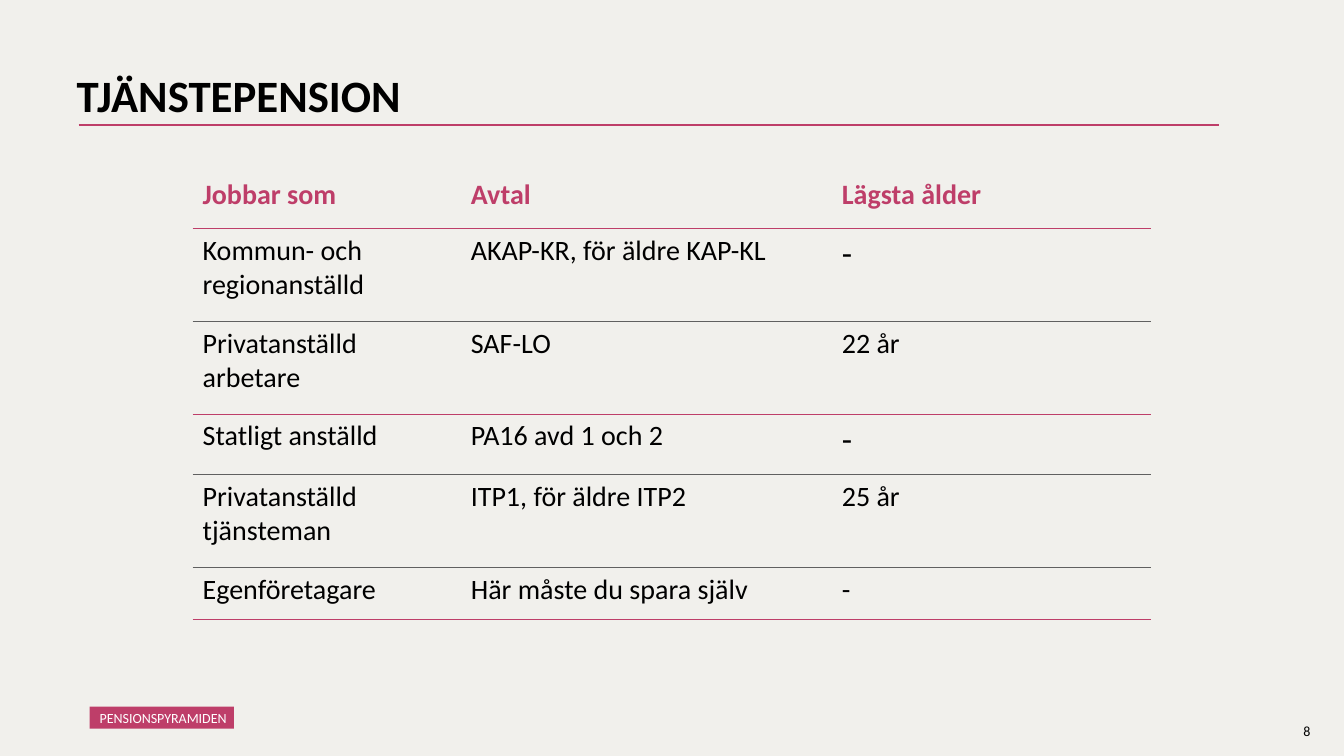
"""Build the occupational pension slide with its table of agreements."""
from lxml.etree import SubElement as Sub
from pptx import Presentation
from pptx.dml.color import RGBColor as Rgb
from pptx.enum.shapes import MSO_CONNECTOR as Conn, MSO_SHAPE as Shape
from pptx.enum.text import MSO_ANCHOR as Anchor, PP_ALIGN as Align
from pptx.oxml.ns import qn
from pptx.util import Inches, Pt

COLORS = {"back": "F1F0EC", "pink": "BE3E69", "gray": "606060",
          "black": "000000", "white": "FFFFFF"}
TITLE = "TJÄNSTEPENSION"
TAG = "PENSIONSPYRAMIDEN"
PAGE = "8"
ROWS = [
    ("Jobbar som", "Avtal", "Lägsta ålder"),
    ("Kommun- och regionanställd", "AKAP-KR, för äldre KAP-KL", "-"),
    ("Privatanställd arbetare", "SAF-LO", "22 år"),
    ("Statligt anställd", "PA16 avd 1 och 2", "-"),
    ("Privatanställd tjänsteman", "ITP1, för äldre ITP2", "25 år"),
    ("Egenföretagare", "Här måste du spara själv", "-"),
]
WIDTHS = [2.66, 3.68, 3.17]
HEIGHTS = [0.56, 0.92, 0.92, 0.6, 0.92, 0.52]
RULES = [("pink", 1), ("gray", 0.5), ("pink", 0.5),
         ("gray", 0.5), ("gray", 0.5), ("pink", 0.5)]
BIG = {(1, 2), (3, 2)}


def color(name):
    return Rgb.from_string(COLORS[name])


def box(*sides):
    return [Inches(side) for side in sides]


def write(frame, text, size, tint="black", bold=False, **form):
    frame.text = text
    para = frame.paragraphs[0]
    for key, value in {"alignment": Align.LEFT, **form}.items():
        setattr(para, key, value)
    font = para.runs[0].font
    for key, value in {"name": "Calibri", "size": Pt(size), "bold": bold}.items():
        setattr(font, key, value)
    font.color.rgb = color(tint)


def border(cell, side, rule=None):
    line = Sub(cell._tc.get_or_add_tcPr(), qn("a:ln" + side))
    if rule:
        tint, width = rule
        line.set("w", str(Pt(width)))
        fill = Sub(line, qn("a:solidFill"))
        Sub(fill, qn("a:srgbClr")).set("val", COLORS[tint])
    else:
        line.set("w", "0")
        Sub(line, qn("a:noFill"))


def add_grid(slide):
    spot = box(1.91, 1.71, sum(WIDTHS), sum(HEIGHTS))
    table = slide.shapes.add_table(len(ROWS), len(WIDTHS), *spot).table
    table.first_row = table.horz_banding = False
    for col, width in zip(table.columns, WIDTHS):
        col.width = Inches(width)
    for r, (row, high) in enumerate(zip(ROWS, HEIGHTS)):
        table.rows[r].height = Inches(high)
        for c, text in enumerate(row):
            cell = table.cell(r, c)
            write(cell.text_frame, text, 24 if (r, c) in BIG else 20,
                  "black" if r else "pink", r == 0)
            edges = {"L": None, "R": None,
                     "T": RULES[r - 1] if r else None, "B": RULES[r]}
            for side, rule in edges.items():
                border(cell, side, rule)
            cell.fill.background()


def main():
    deck = Presentation()
    deck.slide_width, deck.slide_height = box(13.33, 7.5)
    slide = deck.slides.add_slide(deck.slide_layouts[5])
    slide.background.fill.solid()
    slide.background.fill.fore_color.rgb = color("back")
    shapes = slide.shapes

    title = shapes.title
    title.left, title.top, title.width, title.height = box(0.66, 0.68, 11.5, 1.45)
    title.text_frame.vertical_anchor = Anchor.TOP
    write(title.text_frame, TITLE, 32, bold=True, line_spacing=0.9)

    rule = shapes.add_connector(Conn.STRAIGHT, *box(0.78, 1.24, 12.09, 1.24))
    rule.line.color.rgb = color("pink")
    rule.line.width = Pt(1.5)
    Sub(rule._element.spPr, qn("a:effectLst"))

    add_grid(slide)

    tag = shapes.add_shape(Shape.RECTANGLE, *box(0.89, 7.01, 1.43, 0.22))
    tag.shadow.inherit = False
    tag.fill.solid()
    tag.fill.fore_color.rgb = color("pink")
    tag.line.fill.background()
    frame = tag.text_frame
    form = {"margin_left": Inches(0.1), "margin_top": Inches(0.08),
            "margin_right": Inches(0.04), "margin_bottom": Inches(0.05),
            "vertical_anchor": Anchor.MIDDLE, "word_wrap": True}
    for key, value in form.items():
        setattr(frame, key, value)
    write(frame, TAG, 10, "white", line_spacing=0.9)

    page = shapes.add_textbox(*box(12.83, 7.12, 0.4, 0.27)).text_frame
    page.word_wrap = True
    write(page, PAGE, 10)
    deck.save("out.pptx")


if __name__ == "__main__":
    main()
